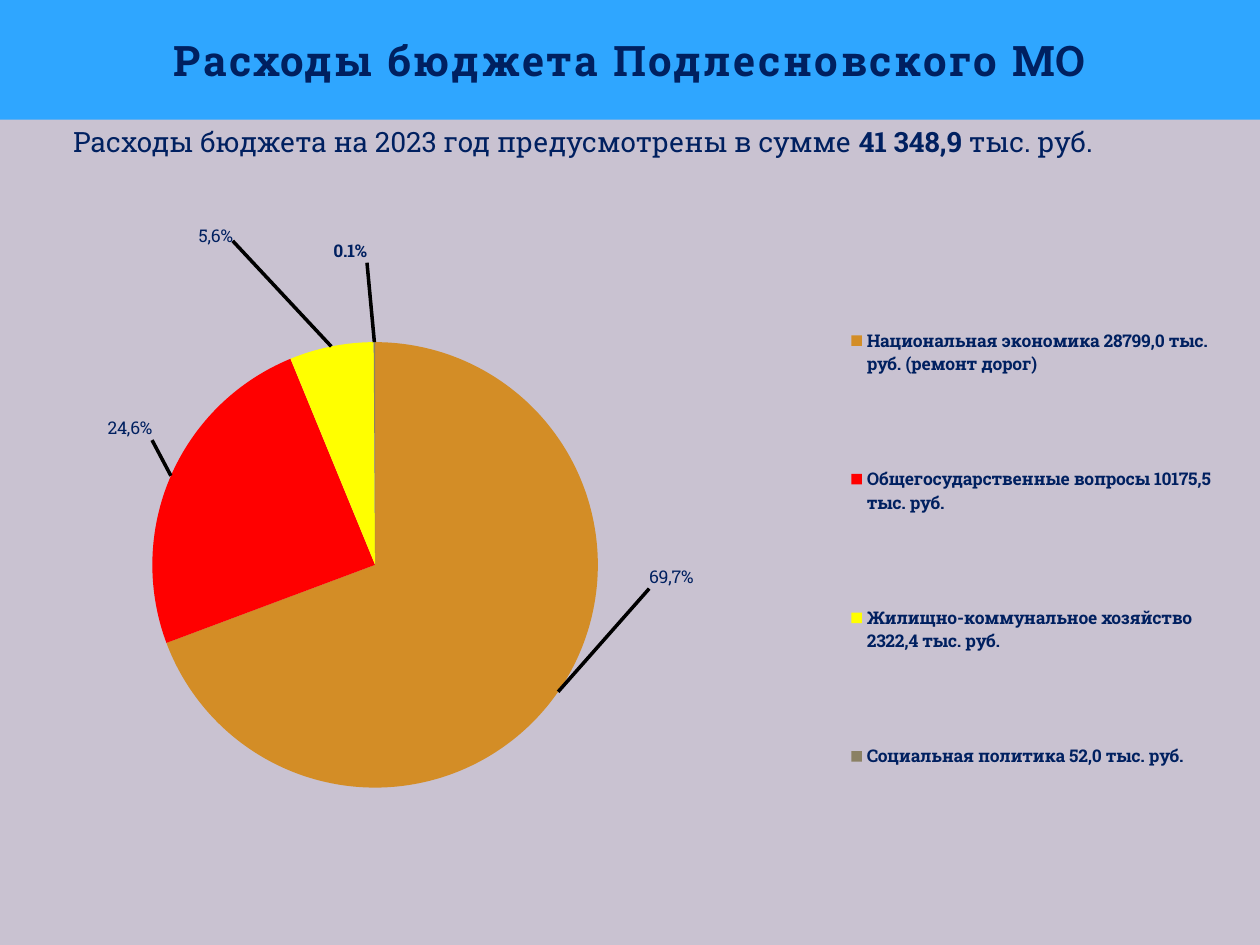
"""Build the budget expenditure slide with a labelled pie chart."""
from dataclasses import dataclass
from typing import Optional

from lxml import etree
from pptx import Presentation
from pptx import util as u
from pptx.chart import data as chart_data
from pptx.dml.color import RGBColor
from pptx.enum import chart as charts, text
from pptx.oxml import parse_xml
from pptx.oxml.ns import nsdecls, qn

FONT = "Roboto Slab"
NAVY = "002060"


@dataclass(frozen=True)
class Expense:
    """One budget section, with its label and the label's shift."""

    name: str
    share: Optional[float]
    color: str
    label: Optional[str] = None
    shift: Optional[tuple[float, float]] = None


EXPENSES = [
    Expense("Национальная экономика 28799,0 тыс. руб. (ремонт дорог)", 0.693, "D38D26", "69,7%", (0.07, -0.2)),
    Expense("Общегосударственные вопросы 10175,5 тыс. руб.", 0.245, "FF0000", "24,6%", (-0.01, -0.05)),
    Expense("", None, "00B0F0"),
    Expense("Жилищно-коммунальное хозяйство 2322,4 тыс. руб.", 0.061, "FFFF00", "5,6%", (-0.08, -0.15)),
    Expense("Социальная политика 52,0 тыс. руб.", 0.001, "8B8164", None, (-0.02, -0.11)),
]


def rgb(color: str) -> RGBColor:
    """Turn a hex string into a colour."""
    return RGBColor.from_string(color)


def style(font, size: float, bold: Optional[bool] = None) -> None:
    """Apply the slide's typeface and text colour."""
    font.name, font.size, font.bold = FONT, u.Pt(size), bold
    font.color.rgb = rgb(NAVY)


def place(shape, left: float, top: float, width: float, height: float) -> None:
    """Move and size a shape in inches."""
    shape.left, shape.top = u.Inches(left), u.Inches(top)
    shape.width, shape.height = u.Inches(width), u.Inches(height)


def manual_layout(inner: bool = False, **values: float):
    """Make a manual chart layout; without a size it is an offset."""
    parts = {"layoutTarget": "inner"} if inner else {}
    if "w" in values:
        parts |= {"xMode": "edge", "yMode": "edge"}
    tags = "".join(f'<c:{tag} val="{value}"/>' for tag, value in (parts | values).items())
    return parse_xml(f'<c:layout {nsdecls("c")}><c:manualLayout>{tags}</c:manualLayout></c:layout>')


def set_layout(element, index: int, layout) -> None:
    """Replace the layout of a chart element."""
    for old in element.findall(qn("c:layout")):
        element.remove(old)
    element.insert(index, layout)


def add_title(slide) -> None:
    """Fill the title band."""
    title = slide.shapes.title
    place(title, 0, 0, 10, 0.95)
    title.fill.solid()
    title.fill.fore_color.rgb = rgb("2FA6FF")
    title.text_frame.vertical_anchor = text.MSO_ANCHOR.MIDDLE
    paragraph = title.text_frame.paragraphs[0]
    paragraph.alignment = text.PP_ALIGN.CENTER
    run = paragraph.add_run()
    run.text = "Расходы бюджета Подлесновского МО"
    style(run.font, 24, True)
    run.font._element.set("spc", "150")


def add_summary(slide) -> None:
    """Write the total in the body placeholder."""
    body = slide.placeholders[1]
    place(body, 0.33, 0.94, 9.5, 5.71)
    paragraph = body.text_frame.paragraphs[0]
    paragraph.alignment = text.PP_ALIGN.JUSTIFY
    paragraph.space_before = u.Pt(3.2)
    properties = paragraph._p.get_or_add_pPr()
    properties.set("marL", str(u.Inches(0.6)))
    properties.set("indent", str(u.Inches(-0.45)))
    etree.SubElement(properties, qn("a:buNone"))
    pieces = [("Расходы бюджета на 2023 год предусмотрены в сумме ", False), ("41 348,9", True), (" тыс. руб. ", False)]
    for words, bold in pieces:
        run = paragraph.add_run()
        run.text = words
        style(run.font, 16, bold)


def label_point(point, expense: Expense) -> None:
    """Colour a slice and place its label."""
    point.format.fill.solid()
    point.format.fill.fore_color.rgb = rgb(expense.color)
    if not expense.shift:
        return
    label = point.data_label
    if expense.label:
        run = label.text_frame.paragraphs[0].add_run()
        run.text = expense.label
        style(run.font, 10, False)
    else:
        style(label.font, 10, True)
    label.position = charts.XL_LABEL_POSITION.OUTSIDE_END
    x, y = expense.shift
    label._dLbl.insert(1, manual_layout(x=x, y=y))


def add_legend(chart) -> None:
    """Show the legend at the right, without the empty section."""
    chart.has_legend = True
    legend = chart.legend
    legend.position = charts.XL_LEGEND_POSITION.RIGHT
    legend.include_in_layout = False
    style(legend.font, 10, True)
    hidden = parse_xml(f'<c:legendEntry {nsdecls("c")}><c:idx val="2"/><c:delete val="1"/></c:legendEntry>')
    legend._element.insert(1, hidden)
    set_layout(legend._element, 2, manual_layout(x=0.67, y=0.02, w=0.31, h=0.95))


def add_pie(slide) -> None:
    """Add the pie chart with its legend and leader lines."""
    chart_values = chart_data.CategoryChartData(number_format="0.0%")
    chart_values.categories = [expense.name for expense in EXPENSES]
    chart_values.add_series("Series 1", [expense.share for expense in EXPENSES])
    frame = slide.shapes.add_chart(
        charts.XL_CHART_TYPE.PIE, u.Inches(0.23), u.Inches(1.78), u.Inches(9.64), u.Inches(5.2), chart_values)
    chart = frame.chart
    chart.has_title = False
    style(chart.font, 10)
    set_layout(chart._chartSpace.chart.plotArea, 0, manual_layout(True, x=0.04, y=0.18, w=0.49, h=0.68))
    add_legend(chart)

    plot = chart.plots[0]
    plot.vary_by_categories = True
    series = plot.series[0]
    labels = series.data_labels
    labels.show_value = True
    labels.number_format, labels.number_format_is_linked = "0.0%", False
    labels.position = charts.XL_LABEL_POSITION.OUTSIDE_END
    style(labels.font, 10, True)
    for index, expense in enumerate(EXPENSES):
        label_point(series.points[index], expense)
    labels._element.append(parse_xml(
        f'<c:leaderLines {nsdecls("c", "a")}><c:spPr><a:ln w="{u.Pt(2)}"><a:solidFill>'
        '<a:srgbClr val="000000"/></a:solidFill></a:ln></c:spPr></c:leaderLines>'))


def main() -> None:
    """Create and save the presentation."""
    presentation = Presentation()
    presentation.slide_width, presentation.slide_height = u.Inches(10), u.Inches(7.5)
    slide = presentation.slides.add_slide(presentation.slide_layouts[1])
    slide.background.fill.solid()
    slide.background.fill.fore_color.rgb = rgb("C9C2D1")
    add_title(slide)
    add_summary(slide)
    add_pie(slide)
    presentation.save("out.pptx")


if __name__ == "__main__":
    main()
